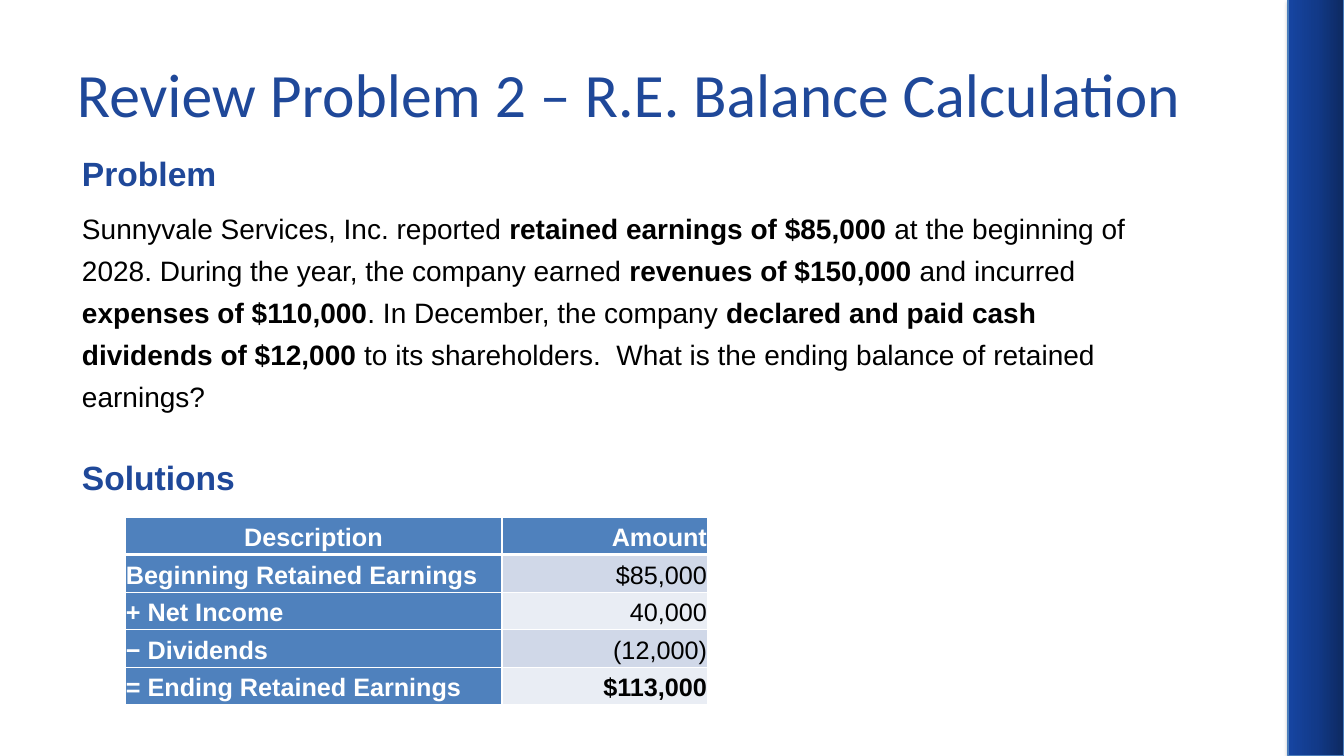
from copy import deepcopy
from dataclasses import dataclass

from lxml import etree
from pptx import Presentation
from pptx.dml.color import RGBColor
from pptx.enum.shapes import MSO_SHAPE
from pptx.enum.text import MSO_ANCHOR, PP_ALIGN
from pptx.oxml.ns import qn
from pptx.util import Emu, Pt

RECTANGLE = MSO_SHAPE.RECTANGLE
TOP, MIDDLE = MSO_ANCHOR.TOP, MSO_ANCHOR.MIDDLE
LEFT, CENTER, RIGHT = PP_ALIGN.LEFT, PP_ALIGN.CENTER, PP_ALIGN.RIGHT
EMU_PER_PX = 12192000 / 1344


@dataclass(frozen=True)
class Theme:
    """Colours, fonts and type sizes of the slide."""
    heading: str = "1F4899"
    ink: str = "000000"
    white: str = "FFFFFF"
    table_head: str = "4F81BD"
    stripes: tuple = ("D0D8E8", "E9EDF4")
    band: tuple = ("1645A2", "123A89", "0D2960")
    band_line: str = "4B7EBC"
    title_font: str = "Calibri"
    body_font: str = "Arial"
    title_size: int = 44
    heading_size: int = 24
    body_size: int = 20
    table_size: int = 18


def px(length):
    """Turn px into EMU."""
    return Emu(round(length * EMU_PER_PX))


def rgb(color):
    """Turn a hex string into a colour."""
    return RGBColor.from_string(color)


def write(paragraph, text, *, size, color, font, bold=False, align=LEFT,
          spacing=None, after=0):
    """Append a formatted run to a paragraph."""
    paragraph.alignment = align
    paragraph.line_spacing = spacing
    paragraph.space_after = Pt(after)
    run = paragraph.add_run()
    run.text = text
    run.font.size = Pt(size)
    run.font.color.rgb = rgb(color)
    run.font.name = font
    run.font.bold = bold


class SlideBuilder:
    """Draws themed elements on one slide."""

    def __init__(self, slide, theme):
        """Keep the slide and its theme."""
        self.slide = slide
        self.theme = theme

    def band(self, left, top, width, height):
        """Draw the gradient side band with its soft shadow."""
        band = self.slide.shapes.add_shape(
            RECTANGLE, px(left), px(top), px(width), px(height))
        band.line.color.rgb = rgb(self.theme.band_line)
        band.line.width = Pt(0.75)
        band.fill.gradient()
        band.fill.gradient_angle = 0
        properties = band._element.spPr
        first_stop = properties.find(".//" + qn("a:gs"))
        first_stop.addnext(deepcopy(first_stop))
        for stop, color, position in zip(
                band.fill.gradient_stops, self.theme.band, (0, 0.5, 1)):
            stop.color.rgb = rgb(color)
            stop.position = position
        band.shadow.inherit = False
        shadow = etree.SubElement(
            properties.find(qn("a:effectLst")), qn("a:outerShdw"),
            blurRad=str(Pt(3.1)), dist=str(Pt(1.8)), dir="5400000", rotWithShape="0")
        tint = etree.SubElement(shadow, qn("a:srgbClr"), val=self.theme.ink)
        etree.SubElement(tint, qn("a:alpha"), val="35000")

    def text(self, left, top, width, height, segments, *, inset=(0, 0),
             anchor=TOP, **style):
        """Place a paragraph made of (text, bold) segments."""
        frame = self.slide.shapes.add_textbox(
            px(left), px(top), px(width), px(height)).text_frame
        frame.word_wrap = True
        frame.vertical_anchor = anchor
        frame.margin_left = frame.margin_right = px(inset[0])
        frame.margin_top = frame.margin_bottom = px(inset[1])
        for words, bold in segments:
            write(frame.paragraphs[0], words, bold=bold, **style)

    def title(self, words):
        """Place the slide title."""
        self.text(67, 30, 1210, 126, [(words, False)], inset=(10, 5), anchor=MIDDLE,
                  size=self.theme.title_size, color=self.theme.heading,
                  font=self.theme.title_font)

    def heading(self, top, words):
        """Place a section heading."""
        self.text(82, top, 1211, 33, [(words, True)], spacing=Pt(23.8), after=10,
                  size=self.theme.heading_size, color=self.theme.heading,
                  font=self.theme.body_font)

    def borders(self, cell, top, bottom):
        """Give a cell white borders, with widths in points."""
        sides = (("a:lnL", 1), ("a:lnR", 1), ("a:lnT", top), ("a:lnB", bottom))
        for place, (tag, width) in enumerate(sides):
            line = etree.Element(qn(tag), w=str(Pt(width)))
            fill = etree.SubElement(line, qn("a:solidFill"))
            etree.SubElement(fill, qn("a:srgbClr"), val=self.theme.white)
            cell._tc.get_or_add_tcPr().insert(place, line)

    def table(self, left, top, height, widths, rows):
        """Draw a table with a header row, a label column and striped values."""
        theme = self.theme
        table = self.slide.shapes.add_table(
            len(rows), len(widths), px(left), px(top), px(sum(widths)), px(height)).table
        for column, width in zip(table.columns, widths):
            column.width = px(width)
        for r, row in enumerate(rows):
            for c, words in enumerate(row):
                cell = table.cell(r, c)
                is_head = r == 0 or c == 0
                cell.fill.solid()
                cell.fill.fore_color.rgb = rgb(
                    theme.table_head if is_head else theme.stripes[(r - 1) % 2])
                self.borders(cell, 3 if r == 1 else 1, 3 if r == 0 else 1)
                cell.vertical_anchor = MIDDLE
                cell.margin_left = cell.margin_right = px(1)
                cell.margin_top = cell.margin_bottom = px(1)
                align = RIGHT if c else CENTER if r == 0 else LEFT
                write(cell.text_frame.paragraphs[0], words, align=align,
                      size=theme.table_size, font=theme.body_font,
                      color=theme.white if is_head else theme.ink,
                      bold=is_head or r == len(rows) - 1, spacing=1.15, after=10)


PROBLEM = [
    ("Sunnyvale Services, Inc. reported ", False),
    ("retained earnings of $85,000", True),
    (" at the beginning of 2028. During the year, the company earned ", False),
    ("revenues of $150,000", True),
    (" and incurred ", False),
    ("expenses of $110,000", True),
    (". In December, the company ", False),
    ("declared and paid cash dividends of $12,000", True),
    (" to its shareholders.  What is the ending balance of retained earnings?", False),
]
SOLUTION = [
    ("Description", "Amount"),
    ("Beginning Retained Earnings", "$85,000"),
    ("+ Net Income", "40,000"),
    ("− Dividends", "(12,000)"),
    ("= Ending Retained Earnings", "$113,000"),
]


def main():
    """Build and save the slide."""
    deck = Presentation()
    deck.slide_width, deck.slide_height = px(1344), px(756)
    theme = Theme()
    builder = SlideBuilder(deck.slides.add_slide(deck.slide_layouts[6]), theme)
    builder.band(1288, 0, 56, 756)
    builder.title("Review Problem 2 – R.E. Balance Calculation")
    builder.heading(160, "Problem")
    builder.text(82, 203, 1077, 223, PROBLEM, size=theme.body_size, color=theme.ink,
                 font=theme.body_font, spacing=Pt(30), after=12)
    builder.heading(464, "Solutions")
    builder.table(125, 517, 188, (377, 206), SOLUTION)
    deck.save("out.pptx")


if __name__ == "__main__":
    main()
